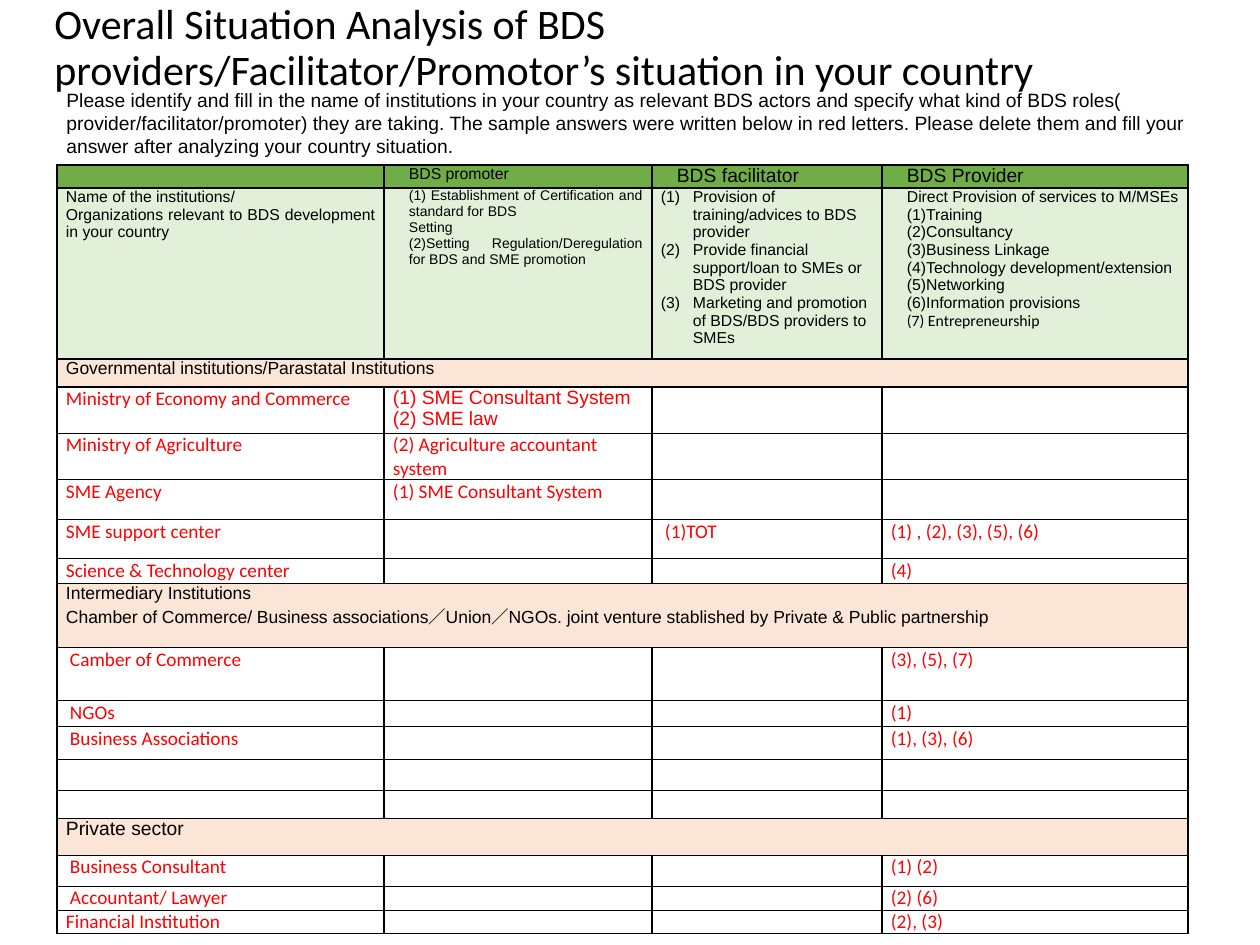
from dataclasses import dataclass, replace
from lxml.etree import SubElement
from pptx import Presentation
from pptx.dml.color import RGBColor as Color
from pptx.enum.text import MSO_ANCHOR as Anchor, PP_ALIGN as Align
from pptx.oxml.ns import qn
from pptx.util import Pt

EMU_PER_PX = 914400 / 126


def px(length):
    return round(length * EMU_PER_PX)


@dataclass(frozen=True)
class Style:
    size: int
    font: str = "Arial"
    color: str = "000000"
    align: Align = Align.LEFT
    indent: int = 0
    numbered: bool = False


@dataclass(frozen=True)
class Theme:
    header: str = "70AD47"
    guide: str = "E2F0D9"
    section: str = "FBE5D6"
    border: str = "000000"
    border_width: int = 12700
    cell_inset: int = 9
    empty_size: int = 10
    title: Style = Style(24, "Calibri")
    intro: Style = Style(11)
    heading: Style = Style(11, align=Align.JUSTIFY, indent=16)
    small_heading: Style = Style(9, align=Align.JUSTIFY, indent=16)
    label: Style = Style(9, align=Align.JUSTIFY)
    promoter: Style = Style(8, align=Align.JUSTIFY, indent=16)
    facilitator: Style = Style(9, indent=32, numbered=True)
    group: Style = Style(10, align=Align.JUSTIFY)
    private: Style = Style(11, align=Align.JUSTIFY)
    answer: Style = Style(11, "Calibri", "FF0000")
    answer_law: Style = Style(11, "Arial", "FF0000")
    answer_inset: Style = Style(11, "Calibri", "FF0000", indent=4)


THEME = Theme()


def lines(style, *texts):
    return [(style, text) for text in texts]


def answers(height, name, promoter="", facilitator="", provider="", inset=False):
    name_style = THEME.answer_inset if inset else THEME.answer
    styles = (name_style, THEME.answer, THEME.answer_inset, THEME.answer)
    texts = (name, promoter, facilitator, provider)
    cells = [lines(style, text) if text else [] for style, text in zip(styles, texts)]
    return height, None, cells


def section(height, style, *texts):
    return height, THEME.section, [lines(style, *texts)]


COLUMNS = (327, 268, 230, 306)
HEADER = (23, THEME.header, [
    [],
    lines(THEME.small_heading, "BDS promoter"),
    lines(THEME.heading, "BDS facilitator"),
    lines(THEME.heading, "BDS Provider"),
])
GUIDE = (171, THEME.guide, [
    lines(THEME.label, "Name of the institutions/",
          "Organizations relevant to BDS development in your country"),
    lines(THEME.promoter, "(1) Establishment of Certification and standard for BDS", "Setting",
          "(2)Setting Regulation/Deregulation for BDS and SME promotion"),
    lines(THEME.facilitator, "Provision of training/advices to BDS provider",
          "Provide financial support/loan to SMEs or BDS provider",
          "Marketing and promotion of BDS/BDS providers to SMEs"),
    lines(THEME.small_heading, "Direct Provision of services to M/MSEs", "(1)Training",
          "(2)Consultancy", "(3)Business Linkage", "(4)Technology development/extension",
          "(5)Networking", "(6)Information provisions")
    + lines(replace(THEME.small_heading, font="Calibri"), "(7) Entrepreneurship"),
])
ECONOMY = (46, None, [
    lines(THEME.answer, "Ministry of Economy and Commerce"),
    lines(THEME.answer_law, "(1) SME Consultant System", "(2) SME law"),
    [], [],
])
ROWS = [
    HEADER,
    GUIDE,
    section(28, THEME.group, "Governmental institutions/Parastatal Institutions"),
    ECONOMY,
    answers(46, "Ministry of Agriculture", "(2) Agriculture accountant system"),
    answers(40, "SME Agency", "(1) SME Consultant System"),
    answers(39, "SME support center", facilitator="(1)TOT", provider="(1) , (2), (3), (5), (6)"),
    answers(25, "Science & Technology center", provider="(4)"),
    section(64, THEME.group, "Intermediary Institutions",
            "Chamber of Commerce/ Business associations／Union／NGOs. "
            "joint venture stablished by Private & Public partnership"),
    answers(53, "Camber of Commerce", provider="(3), (5), (7)", inset=True),
    answers(26, "NGOs", provider="(1)", inset=True),
    answers(33, "Business Associations", provider="(1), (3), (6)", inset=True),
    answers(31, ""),
    answers(28, ""),
    section(37, THEME.private, "Private sector"),
    answers(31, "Business Consultant", provider="(1) (2)", inset=True),
    answers(24, "Accountant/ Lawyer", provider="(2) (6)", inset=True),
    answers(23, "Financial Institution", provider="(2), (3)"),
]


def write_paragraph(para, style, text):
    para.alignment = style.align
    if style.indent:
        props = para._p.get_or_add_pPr()
        props.set("marL", str(px(style.indent)))
        props.set("indent", str(-px(style.indent) if style.numbered else 0))
        if style.numbered:
            SubElement(props, qn("a:buAutoNum"), type="arabicParenBoth")
    span = para.add_run()
    span.text = text
    span.font.size = Pt(style.size)
    span.font.name = style.font
    span.font.bold = False
    span.font.color.rgb = Color.from_string(style.color)


def write_lines(frame, content):
    for index, (style, text) in enumerate(content):
        para = frame.add_paragraph() if index else frame.paragraphs[0]
        write_paragraph(para, style, text)
    if not content:
        SubElement(frame.paragraphs[0]._p, qn("a:endParaRPr"), sz=str(THEME.empty_size * 100))


def add_text(page, box, style, text, anchor=Anchor.TOP, spacing=None):
    frame = page.shapes.add_textbox(*map(px, box)).text_frame
    frame.word_wrap = True
    frame.vertical_anchor = anchor
    write_lines(frame, lines(style, text))
    frame.paragraphs[0].line_spacing = spacing


def format_cell(cell, fill):
    cell.margin_left = cell.margin_right = px(THEME.cell_inset)
    cell.margin_top = cell.margin_bottom = 0
    props = cell._tc.get_or_add_tcPr()
    for side in ("lnL", "lnR", "lnT", "lnB"):
        line = SubElement(props, qn(f"a:{side}"), w=str(THEME.border_width))
        solid = SubElement(line, qn("a:solidFill"))
        SubElement(solid, qn("a:srgbClr"), val=THEME.border)
    if fill:
        cell.fill.solid()
        cell.fill.fore_color.rgb = Color.from_string(fill)
    else:
        cell.fill.background()


def add_actor_table(page, left, top):
    height = sum(row[0] for row in ROWS)
    box = (left, top, sum(COLUMNS), height)
    table = page.shapes.add_table(len(ROWS), len(COLUMNS), *map(px, box)).table
    table.first_row = table.horz_banding = False
    for column, width in zip(table.columns, COLUMNS):
        column.width = px(width)
    for index, (row_height, fill, contents) in enumerate(ROWS):
        row = table.rows[index]
        row.height = px(row_height)
        cells = list(row.cells)
        if len(contents) == 1:
            cells[0].merge(cells[-1])
        padded = contents + [[]] * (len(cells) - len(contents))
        for cell, content in zip(cells, padded):
            format_cell(cell, fill)
            write_lines(cell.text_frame, content)


def add_introduction(page, left, top):
    add_text(page, (left, top, 1089, 66), THEME.title,
             "Overall Situation Analysis of BDS providers/Facilitator/Promotor’s "
             "situation in your country", Anchor.MIDDLE, 0.9)
    add_text(page, (left + 12, top + 66, 1191, 106), THEME.intro,
             "Please identify and fill in the name of institutions in your country as relevant "
             "BDS actors and specify what kind of BDS roles( provider/facilitator/promoter) they "
             "are taking. The sample answers were written below in red letters. Please delete "
             "them and fill your answer after analyzing your country situation.")


def main():
    deck = Presentation()
    deck.slide_width, deck.slide_height = px(1260), px(945)
    page = deck.slides.add_slide(deck.slide_layouts[6])
    add_introduction(page, 42, 16)
    add_actor_table(page, 57, 165)
    deck.save("out.pptx")


if __name__ == "__main__":
    main()
